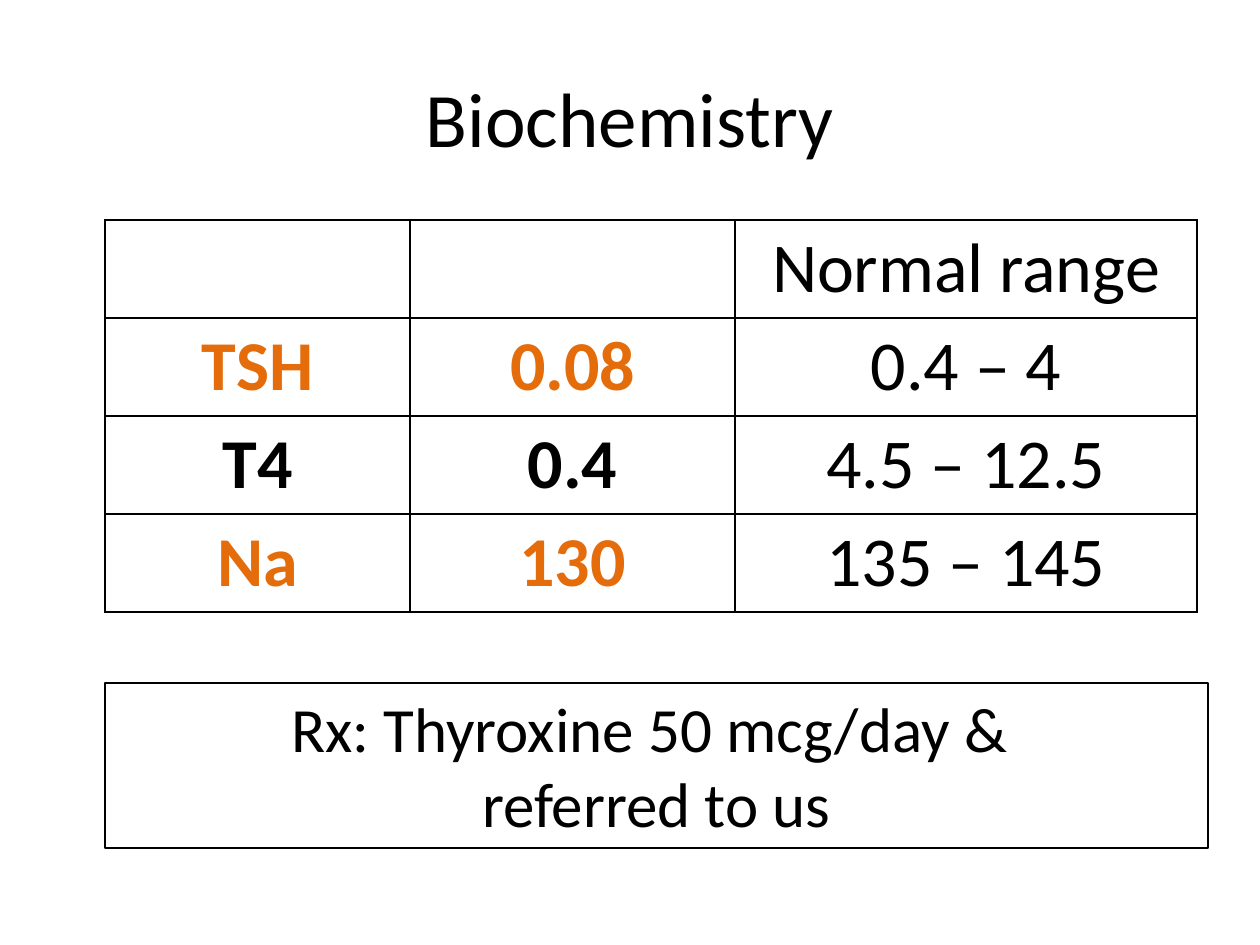
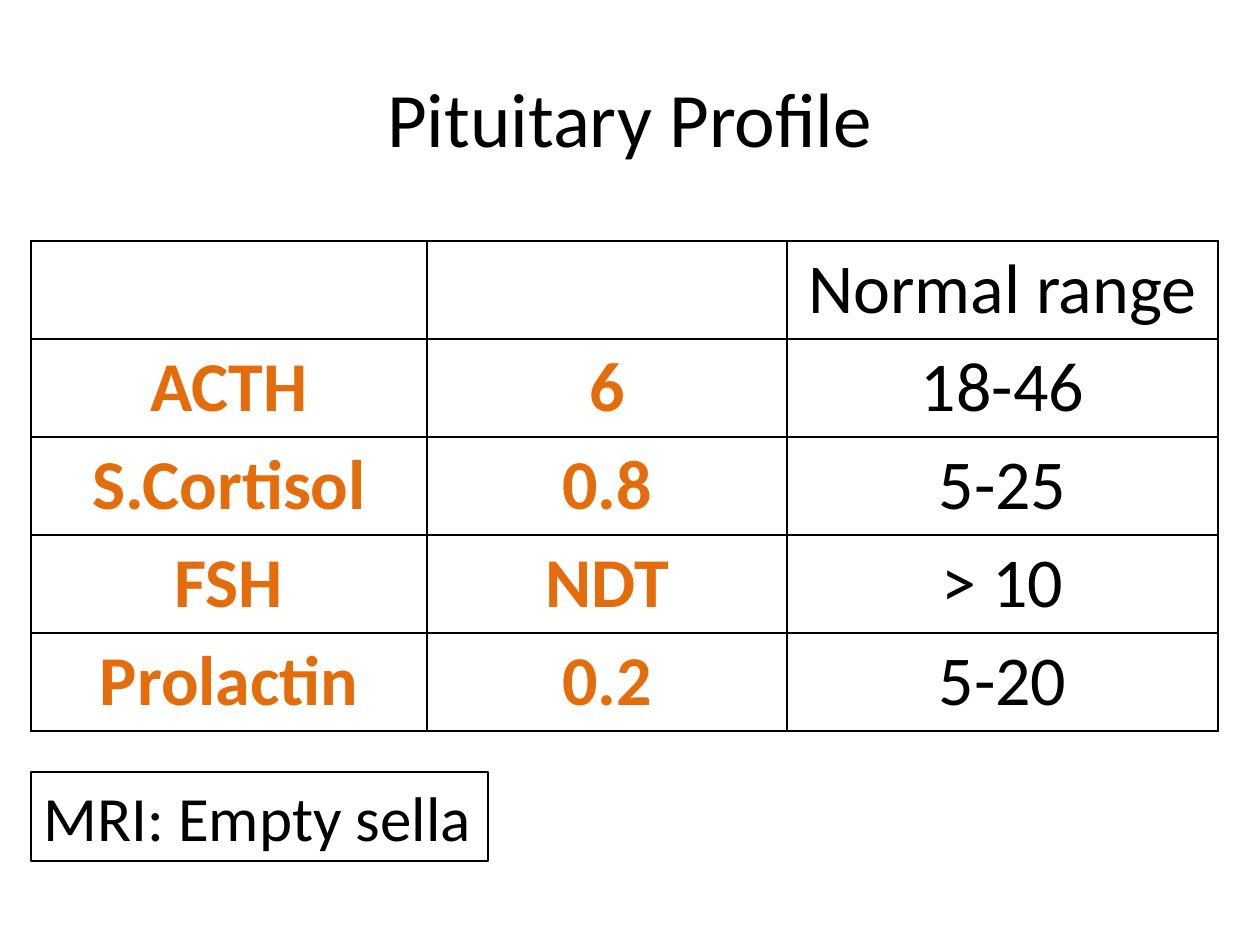
from dataclasses import dataclass
from typing import NamedTuple

from lxml.etree import SubElement
from pptx import Presentation
from pptx.dml.color import RGBColor
from pptx.enum.text import MSO_ANCHOR as Anchor
from pptx.enum.text import MSO_AUTO_SIZE as AutoSize
from pptx.enum.text import PP_ALIGN as Align
from pptx.oxml.ns import qn
from pptx.util import Emu, Pt


@dataclass(frozen=True)
class Theme:
    font: str = "Calibri"
    ink: str = "000000"
    paper: str = "FFFFFF"
    abnormal: str = "E46C0A"
    title_size: int = 44
    table_size: int = 40
    note_size: int = 36
    grid_width: float = 1
    frame_width: float = 1.5


class Box(NamedTuple):
    left: int
    top: int
    width: int
    height: int


THEME = Theme()
EMU_PER_PX = 914400 / 126
PAGE_WIDTH, PAGE_HEIGHT = 1260, 945
TITLE_BOX = Box(63, 38, 1134, 157)
ROW_HEIGHT = 98
TITLE_ONLY = 5


def px(length):
    return Emu(round(length * EMU_PER_PX))


def set_all(target, values):
    for name, value in values.items():
        setattr(target, name, value)


def place(box):
    return [px(length) for length in box]


def write(para, text, size, color=THEME.ink, bold=False, align=Align.CENTER):
    para.alignment = align
    span = para.add_run()
    span.text = text
    set_all(span.font, {"name": THEME.font, "size": Pt(size), "bold": bold})
    span.font.color.rgb = RGBColor.from_string(color)


def add_title(page, text, box):
    title = page.shapes.title
    set_all(title, dict(zip(("left", "top", "width", "height"), place(box))))
    frame = title.text_frame
    set_all(frame, {"vertical_anchor": Anchor.MIDDLE, "word_wrap": True})
    write(frame.paragraphs[0], text, THEME.title_size)


def style_cell(cell):
    properties = cell._tc.get_or_add_tcPr()
    for side in ("lnL", "lnR", "lnT", "lnB"):
        line = SubElement(properties, qn(f"a:{side}"), w=str(Pt(THEME.grid_width)))
        fill = SubElement(line, qn("a:solidFill"))
        SubElement(fill, qn("a:srgbClr"), val=THEME.ink)
    cell.fill.solid()
    cell.fill.fore_color.rgb = RGBColor.from_string(THEME.paper)


def add_results(page, results, column_widths, left, top):
    rows = [("", "", "Normal range"), *results]
    box = Box(left, top, sum(column_widths), ROW_HEIGHT * len(rows))
    table = page.shapes.add_table(len(rows), len(column_widths), *place(box)).table
    set_all(table, {"first_row": False, "horz_banding": False})
    for column, width in zip(table.columns, column_widths):
        column.width = px(width)
    for row_index, row in enumerate(rows):
        table.rows[row_index].height = px(ROW_HEIGHT)
        for column_index, text in enumerate(row[:3]):
            cell = table.cell(row_index, column_index)
            style_cell(cell)
            if not text:
                continue
            measured = row_index > 0 and column_index < 2
            color = row[3] if measured else THEME.ink
            write(cell.text_frame.paragraphs[0], text, THEME.table_size, color, measured)


def add_note(page, lines, box, align, wrap):
    note = page.shapes.add_textbox(*place(box))
    note.line.color.rgb = RGBColor.from_string(THEME.ink)
    note.line.width = Pt(THEME.frame_width)
    frame = note.text_frame
    set_all(frame, {"word_wrap": wrap, "auto_size": AutoSize.SHAPE_TO_FIT_TEXT})
    for index, line in enumerate(lines):
        para = frame.add_paragraph() if index else frame.paragraphs[0]
        write(para, line, THEME.note_size, align=align)


def add_page(deck, title):
    page = deck.slides.add_slide(deck.slide_layouts[TITLE_ONLY])
    add_title(page, title, TITLE_BOX)
    return page


def add_biochemistry(deck):
    page = add_page(deck, "Biochemistry")
    results = [
        ("TSH", "0.08", "0.4 – 4", THEME.abnormal),
        ("T4", "0.4", "4.5 – 12.5", THEME.ink),
        ("Na", "130", "135 – 145", THEME.abnormal),
    ]
    add_results(page, results, (305, 325, 462), 105, 220)
    lines = ("Rx: Thyroxine 50 mcg/day & ", "referred to us")
    add_note(page, lines, Box(105, 683, 1103, 165), Align.CENTER, True)


def add_pituitary_profile(deck):
    page = add_page(deck, "Pituitary Profile")
    results = [
        ("ACTH", "6", "18-46", THEME.abnormal),
        ("S.Cortisol", "0.8", "5-25", THEME.abnormal),
        ("FSH", "NDT", "> 10", THEME.abnormal),
        ("Prolactin", "0.2", "5-20", THEME.abnormal),
    ]
    add_results(page, results, (396, 360, 431), 31, 241)
    add_note(page, ("MRI: Empty sella",), Box(31, 772, 457, 89), Align.LEFT, False)


def main():
    deck = Presentation()
    set_all(deck, {"slide_width": px(PAGE_WIDTH), "slide_height": px(PAGE_HEIGHT)})
    add_biochemistry(deck)
    add_pituitary_profile(deck)
    deck.save("out.pptx")


if __name__ == "__main__":
    main()
